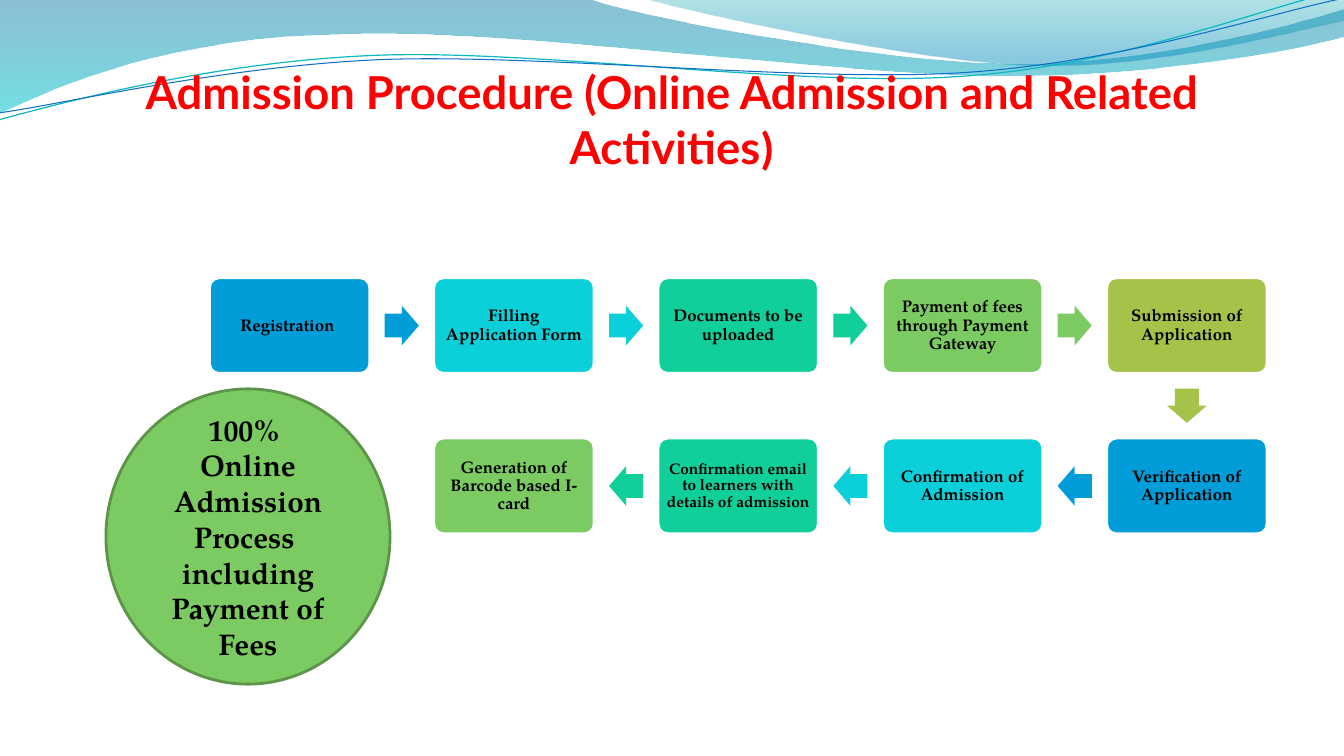
from collections import namedtuple
from math import cos, radians, sin
from lxml import etree
from pptx import Presentation
from pptx.dml.color import RGBColor
from pptx.enum.shapes import MSO_SHAPE
from pptx.enum.text import MSO_ANCHOR, MSO_AUTO_SIZE, PP_ALIGN
from pptx.oxml.ns import qn
from pptx.util import Cm, Pt

CENTER = PP_ALIGN.CENTER
MIDDLE = MSO_ANCHOR.MIDDLE
NO_AUTOFIT = MSO_AUTO_SIZE.NONE
ROUNDED = MSO_SHAPE.ROUNDED_RECTANGLE
ARROW = MSO_SHAPE.RIGHT_ARROW
OVAL = MSO_SHAPE.OVAL

COLORS = {
    "title": "FF0000", "text": "000000", "white": "FFFFFF", "oval_line": "5C9549",
    "blue": "009DD9", "cyan": "0BD0D9", "teal": "10CF9B", "green": "7CCA62",
    "olive": "A5C249", "wave_cyan": "0AB8BF", "wave_blue": "0F6FC6",
    "band_blue": "0074A1", "band_cyan": "00C6CF", "band_teal": "00A1A9",
    "band_sky": "008BBF",
}
SERIF = "TeX Gyre Pagella"
Box = namedtuple("Box", "left top width height")

STEPS = [
    ("Registration ", "blue", 12),
    ("Filling Application Form", "cyan", 12),
    ("Documents to be uploaded", "teal", 12),
    ("Payment of fees through Payment Gateway", "green", 12),
    ("Submission of Application", "olive", 12),
    ("Verification of Application", "blue", 12),
    ("Confirmation of Admission", "cyan", 12),
    ("Confirmation email to learners with details of admission", "teal", 11),
    ("Generation of Barcode based I-card", "green", 12),
]
COLUMNS = 5

BANDS = [
    ([(0, 0), (14.91, -0.02),
      (16.1, 0.43, 22.48, 1.6, 25.68, 1.6),
      (28.91, 1.6, 32.46, 0.66, 33.86, 0.23),
      (33.91, 0.91),
      (33.3, 1.12, 29.46, 1.93, 25.25, 1.91),
      (21.06, 1.91, 12.93, 0.71, 8.71, 0.86),
      (4.37, 0.91, 1.55, 2.11, -0.03, 2.87)],
     [(0, "band_blue", 45), (1, "band_cyan", 55)]),
    ([(16.23, -0.03),
      (17.25, 0.28, 23.09, 1.57, 26.04, 1.65),
      (28.98, 1.75, 32.56, 0.81, 33.86, 0.53),
      (33.86, 0)],
     [(0, "band_teal", 30), (0.8, "band_sky", 45)]),
]
WAVES = [
    ([(-0.03, 3.02),
      (1.63, 2.57, 5.36, 1.57, 9.37, 1.4),
      (13.39, 1.22, 20.07, 2.21, 24.13, 1.93),
      (28.19, 1.68, 31.8, 0.2, 33.81, -0.25)], "wave_cyan", 0.85),
    ([(0, 2.84),
      (1.6, 2.62, 5.54, 1.68, 9.6, 1.5),
      (13.64, 1.35, 20.22, 2.08, 24.26, 1.83),
      (28.32, 1.57, 31.88, 0.36, 33.88, -0.05)], "wave_blue", 0.75),
]
WAVE_TILT = 2.7
WAVE_CENTER = (16.9, 1.48)


def color(name):
    """Return the named colour."""
    return RGBColor.from_string(COLORS[name])


def write(para, text, font=SERIF, size=12, ink="text"):
    """Add bold centred text to a paragraph."""
    para.alignment = CENTER
    span = para.add_run()
    span.text = text
    span.font.name = font
    span.font.size = Pt(size)
    span.font.bold = True
    span.font.color.rgb = color(ink)


def add_shape(page, kind, box, fill, line=None):
    """Add a flat preset shape with an optional 2 pt outline."""
    shape = page.shapes.add_shape(kind, *(Cm(length) for length in box))
    shape.shadow.inherit = False
    shape.fill.solid()
    shape.fill.fore_color.rgb = color(fill)
    if line:
        shape.line.color.rgb = color(line)
        shape.line.width = Pt(2)
    else:
        shape.line.fill.background()
    return shape


def turn(point, angle):
    """Rotate a point clockwise about the centre of the waves."""
    x, y = (value - middle for value, middle in zip(point, WAVE_CENTER))
    cosine, sine = cos(radians(angle)), sin(radians(angle))
    return (WAVE_CENTER[0] + x * cosine - y * sine,
            WAVE_CENTER[1] + x * sine + y * cosine)


def add_outline(page, path, box, close=False, tilt=0):
    """Draw straight lines and cubic curves from the corner of the box."""
    pairs = [turn(part[i:i + 2], tilt) for part in path for i in range(0, len(part), 2)]
    points = [(Cm(box.left + x), Cm(box.top + y)) for x, y in pairs]
    builder = page.shapes.build_freeform(*points[0])
    builder.add_line_segments(points[1:], close=close)
    shape = builder.convert_to_shape()
    shape.shadow.inherit = False
    shape.rotation = -tilt
    segments = iter(list(shape.element.iter(qn("a:lnTo"))))
    for part in path[1:]:
        segment = next(segments)
        if len(part) == 6:
            curve = etree.Element(qn("a:cubicBezTo"))
            segment.addprevious(curve)
            for corner in (segment, next(segments), next(segments)):
                curve.append(corner[0])
                corner.getparent().remove(corner)
    return shape


def add_waves(page, box):
    """Draw the translucent bands and thin wave lines."""
    for path, stops in BANDS:
        band = add_outline(page, path, box, close=True)
        band.line.fill.background()
        band.fill.gradient()
        band.fill.gradient_angle = 270
        for stop, (position, name, _) in zip(band.fill.gradient_stops, stops):
            stop.position = position
            stop.color.rgb = color(name)
        tints = list(band.element.spPr.iter(qn("a:srgbClr")))
        for tint, (_, _, opacity) in zip(tints, stops):
            etree.SubElement(tint, qn("a:alpha")).set("val", str(opacity * 1000))
    for path, name, width in WAVES:
        wave = add_outline(page, path, box, tilt=WAVE_TILT)
        wave.fill.background()
        wave.line.color.rgb = color(name)
        wave.line.width = Pt(width)


def add_title(page, box):
    """Fill the title placeholder and bring it in front of the waves."""
    title = page.shapes.title
    title.left, title.top, title.width, title.height = (Cm(length) for length in box)
    frame = title.text_frame
    frame.auto_size = NO_AUTOFIT
    frame.word_wrap = True
    frame.vertical_anchor = MIDDLE
    frame.margin_left = frame.margin_right = frame.margin_top = 0
    frame.margin_bottom = Cm(0.7)
    para = frame.paragraphs[0]
    write(para, "Admission Procedure (Online Admission and Related Activities",
          font="Lato", size=32.4, ink="title")
    write(para, ")", font="Calibri", size=32.4, ink="title")
    page.shapes.element.append(title.element)


def add_flow(page, box):
    """Lay out the steps in a snake with an arrow after each one."""
    width, height = 4.04, 2.41
    arrow_width, arrow_height = 0.86, 1.0
    pitch_x = (box.width - width) / (COLUMNS - 1)
    pitch_y = box.height - height
    centers = []
    for index in range(len(STEPS)):
        row, column = divmod(index, COLUMNS)
        column = COLUMNS - 1 - column if row else column
        centers.append((box.left + width / 2 + column * pitch_x,
                        box.top + height / 2 + row * pitch_y))
    for index, ((text, fill, size), (x, y)) in enumerate(zip(STEPS, centers)):
        step = add_shape(page, ROUNDED, Box(x - width / 2, y - height / 2, width, height),
                         fill, "white")
        step.adjustments[0] = 0.1
        frame = step.text_frame
        frame.word_wrap = True
        frame.vertical_anchor = MIDDLE
        frame.margin_left = frame.margin_right = Cm(0.12)
        frame.margin_top = frame.margin_bottom = Cm(0.12)
        para = frame.paragraphs[0]
        para.line_spacing = 0.9
        write(para, text, size=size)
        if index + 1 < len(STEPS):
            next_x, next_y = centers[index + 1]
            arrow = add_shape(page, ARROW, Box((x + next_x - arrow_width) / 2,
                                               (y + next_y - arrow_height) / 2,
                                               arrow_width, arrow_height), fill)
            arrow.adjustments[0] = 0.6
            arrow.rotation = 90 if next_y > y else 0 if next_x > x else 180


def add_summary(page, box):
    """Add the round summary of the process."""
    oval = add_shape(page, OVAL, box, "green", "oval_line")
    frame = oval.text_frame
    frame.word_wrap = True
    frame.vertical_anchor = MIDDLE
    write(frame.paragraphs[0], "100%  Online Admission Process  including Payment of Fees", size=21.3)


deck = Presentation()
deck.slide_width, deck.slide_height = Cm(33.87), Cm(19.05)
page = deck.slides.add_slide(deck.slide_layouts[5])
add_waves(page, Box(0, 0, 33.87, 3))
add_title(page, Box(3.6, 2.72, 26.67, 1.24))
add_flow(page, Box(5.28, 7, 26.65, 6.45))
add_summary(page, Box(2.67, 9.8, 7.16, 7.44))
deck.save("out.pptx")
